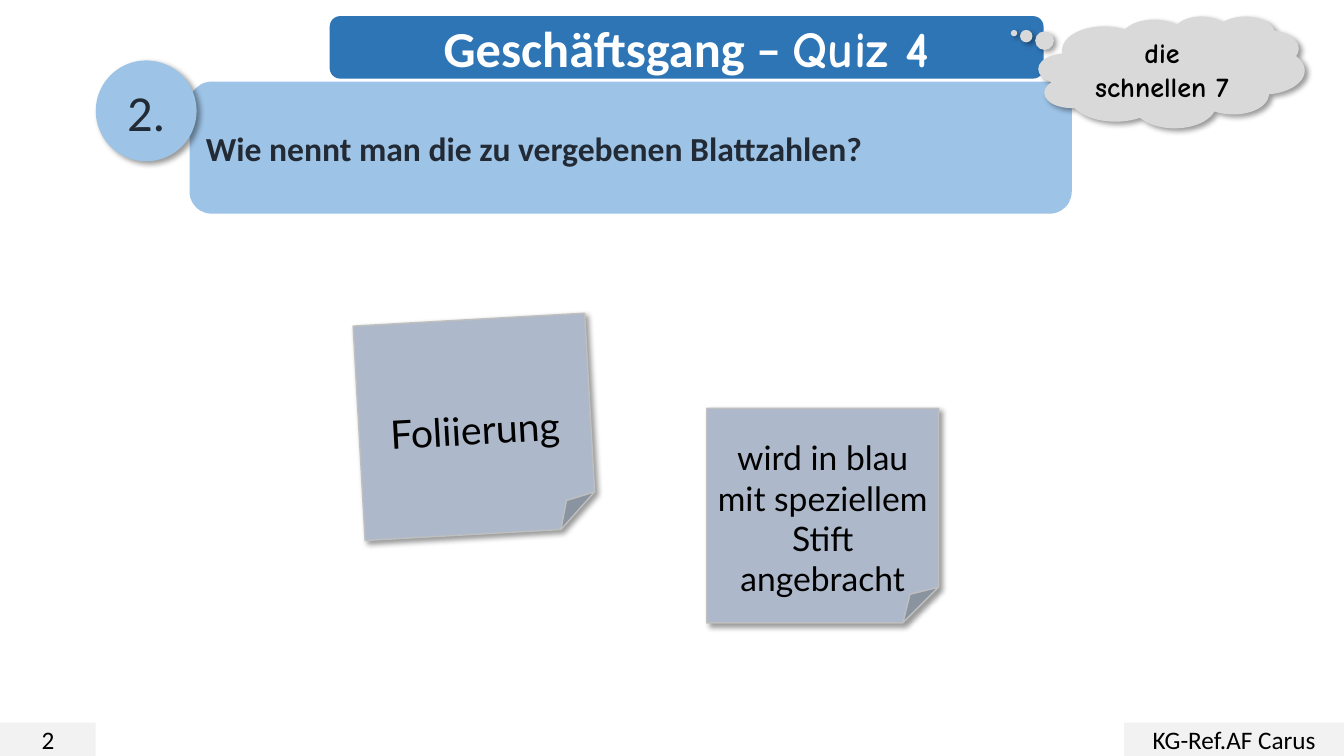
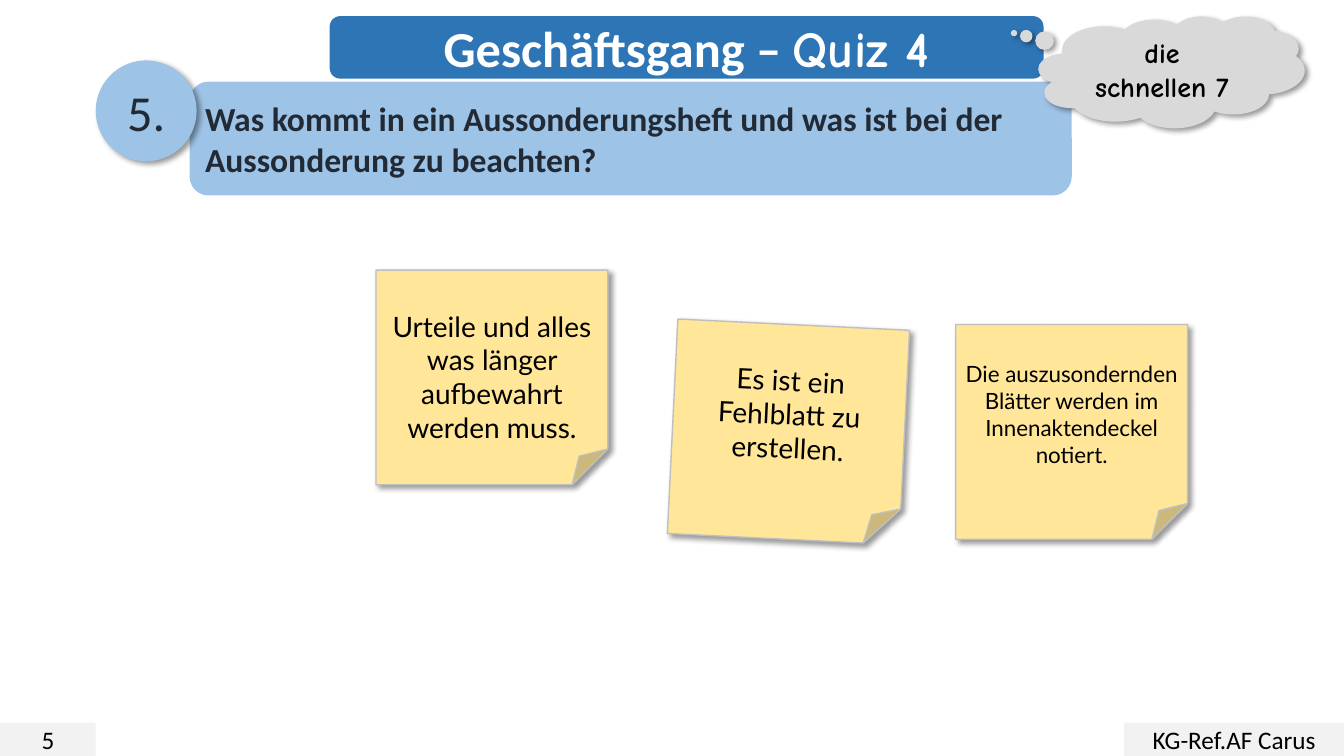
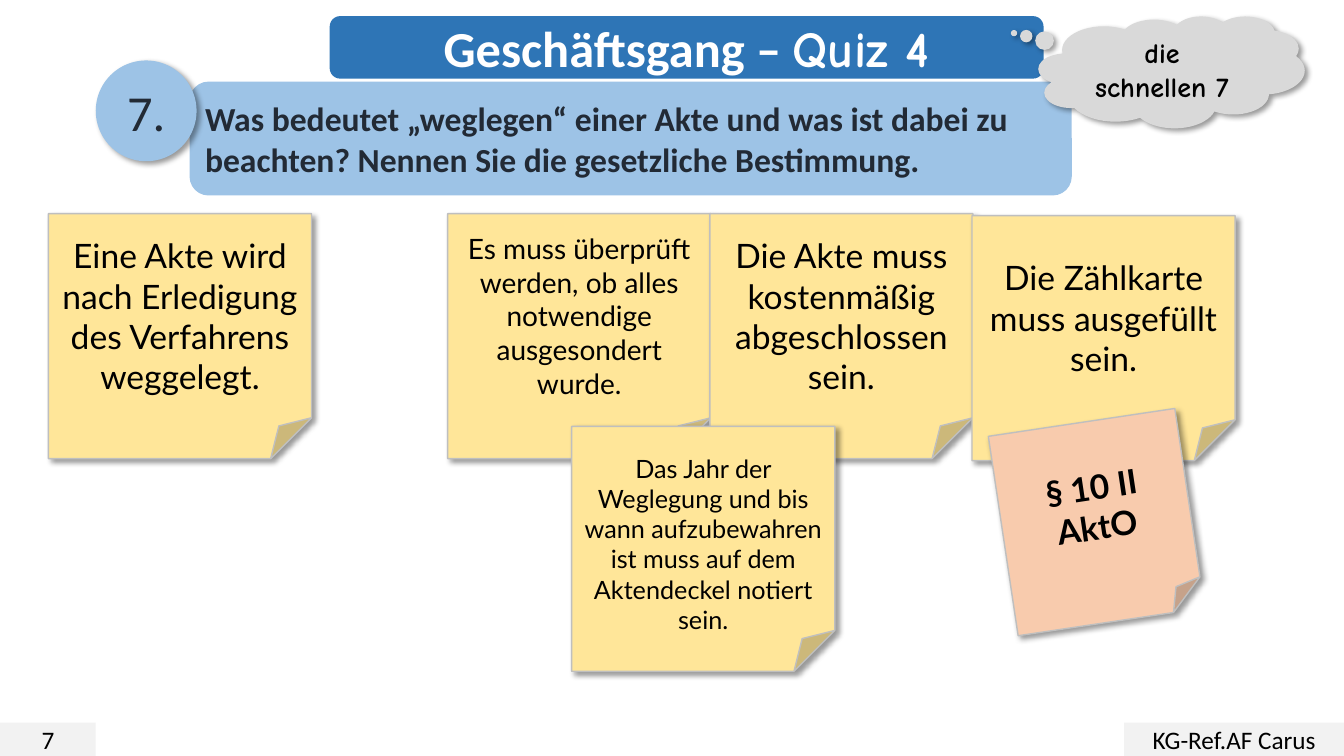
from lxml.etree import SubElement
from pptx import Presentation
from pptx.dml.color import RGBColor
from pptx.enum.shapes import MSO_SHAPE
from pptx.enum.text import MSO_ANCHOR, PP_ALIGN
from pptx.oxml.ns import qn
from pptx.util import Inches, Pt

COLORS = {
    "title": "2E75B6", "band": "9DC3E6", "foot": "F2F2F2", "cloud": "D9D9D9",
    "blue": "ADB9CA", "yellow": "FFE699", "peach": "F8CBAD", "edge": "BFBFBF",
    "ink": "222A35", "black": "000000", "white": "FFFFFF",
}
BODY, COMIC, NOTE = "Calibri", "Comic Neue", "Lato"
TITLE = ("Geschäftsgang – ", "Quiz 4")
CLOUD = "die schnellen 7"
OWNER = "KG-Ref.AF Carus"
SMALL, LARGE, TALL = (2.3, 2.13), (2.61, 2.43), (1.87, 2)

# Notes: text, left, top, text size, then options (lead: text size of a line left free above)
SLIDES = [
    {"num": 2, "ask": "Wie nennt man die zu vergebenen Blattzahlen?",
     "high": 1.31, "dims": SMALL, "color": "blue", "notes": [
         ("Foliierung", 3.56, 3.17, 28, {"turn": 356.8, "lead": 24}),
         ("wird in blau mit speziellem Stift angebracht", 7.01, 4.05, 24, {"lead": 24}),
     ]},
    {"num": 5, "ask": "Was kommt in ein Aussonderungsheft und was ist bei der "
                      "Aussonderung zu beachten?",
     "high": 1.13, "dims": SMALL, "color": "yellow", "notes": [
         ("Urteile und alles was länger aufbewahrt werden muss.", 3.73, 2.68, 20,
          {"lead": 20}),
         ("Es ist ein Fehlblatt zu erstellen.", 6.67, 3.22, 20, {"turn": 2.8}),
         ("Die auszusondernden Blätter werden im Innenaktendeckel notiert.",
          9.48, 3.22, 16, {}),
     ]},
    {"num": 7, "ask": "Was bedeutet „weglegen“ einer Akte und was ist dabei zu "
                      "beachten? Nennen Sie die gesetzliche Bestimmung.",
     "high": 1.13, "dims": LARGE, "color": "yellow", "notes": [
         ("Eine Akte wird nach Erledigung des Verfahrens weggelegt.", 0.48, 2.12, 24, {}),
         ("Es muss überprüft werden, ob alles notwendige ausgesondert wurde.",
          4.44, 2.12, 20, {}),
         ("Die Akte muss kostenmäßig abgeschlossen sein.", 7.04, 2.12, 24, {}),
         ("Die Zählkarte muss ausgefüllt sein.", 9.64, 2.14, 24, {}),
         ("Das Jahr der Weglegung und bis wann aufzubewahren ist muss auf dem "
          "Aktendeckel notiert sein.", 5.67, 4.23, 18, {"lead": 18}),
         ("§ 10 II AktO", 9.94, 4.18, 24,
          {"turn": 351.5, "bold": True, "dims": TALL, "color": "peach"}),
     ]},
]


def rgb(name):
    return RGBColor.from_string(COLORS[name])


def add_shadow(shape):
    effects = shape._element.spPr.find(qn("a:effectLst"))
    outer = SubElement(effects, qn("a:outerShdw"), blurRad=str(Pt(4)),
                       dist=str(Pt(3)), dir=str(45 * 60000), algn="tl", rotWithShape="0")
    tint = SubElement(outer, qn("a:srgbClr"), val=COLORS["black"])
    SubElement(tint, qn("a:alpha"), val="40000")


def style(run, size, font, color, bold):
    run.font.size, run.font.name, run.font.bold = Pt(size), font, bold
    run.font.color.rgb = rgb(color)


def add_box(slide, kind, at, fill, text, size, font=BODY, color="black",
            bold=False, align=PP_ALIGN.CENTER, shadow=False):
    shape = slide.shapes.add_shape(kind, *[Inches(n) for n in at])
    shape.shadow.inherit = False
    shape.fill.solid()
    shape.fill.fore_color.rgb = rgb(fill)
    shape.line.fill.background()
    if shadow:
        add_shadow(shape)
    frame = shape.text_frame
    frame.text = text
    frame.word_wrap = True
    frame.vertical_anchor = MSO_ANCHOR.MIDDLE
    para = frame.paragraphs[0]
    para.alignment = align
    style(para.runs[0], size, font, color, bold)
    return shape


def add_frame(slide, num, ask, high):
    # Title and footers
    title = add_box(slide, MSO_SHAPE.ROUNDED_RECTANGLE, (3.27, 0.16, 7.08, 0.62),
                    "title", TITLE[0], 36, color="white", bold=True)
    quiz = title.text_frame.paragraphs[0].add_run()
    quiz.text = TITLE[1]
    style(quiz, 36, COMIC, "white", True)
    for text, left, wide in ((str(num), 0, 0.95), (OWNER, 11.15, 2.18)):
        add_box(slide, MSO_SHAPE.RECTANGLE, (left, 7.17, wide, 0.33), "foot", text, 18)

    # Question band and its number
    add_box(slide, MSO_SHAPE.ROUNDED_RECTANGLE, (1.88, 0.81, 8.75, high), "band", ask,
            24, color="ink", bold=True, align=PP_ALIGN.LEFT)
    add_box(slide, MSO_SHAPE.OVAL, (0.95, 0.6, 1, 1), "band", f"{num}.", 36,
            color="ink", shadow=True)

    # Thought cloud
    cloud = add_box(slide, MSO_SHAPE.CLOUD_CALLOUT, (10.3, 0.16, 2.64, 1.11), "cloud",
                    CLOUD, 20, font=COMIC, bold=True, shadow=True)
    cloud.adjustments[0], cloud.adjustments[1] = -0.592, -0.348


def add_note(slide, text, left, top, size, dims, color, turn=0, lead=0, bold=False):
    note = add_box(slide, MSO_SHAPE.FOLDED_CORNER, (left, top, *dims), color, text,
                   size, font=NOTE, bold=bold, shadow=True)
    note.line.color.rgb = rgb("edge")
    note.line.width = Pt(1)
    note.rotation = turn
    note.text_frame.margin_top = Inches(0.05) + Pt(lead * 1.2)


def main():
    deck = Presentation()
    deck.slide_width, deck.slide_height = Inches(13.33), Inches(7.5)
    for page in SLIDES:
        slide = deck.slides.add_slide(deck.slide_layouts[6])
        add_frame(slide, page["num"], page["ask"], page["high"])
        base = {"dims": page["dims"], "color": page["color"]}
        for *note, extra in page["notes"]:
            add_note(slide, *note, **{**base, **extra})
    deck.save("out.pptx")


if __name__ == "__main__":
    main()
